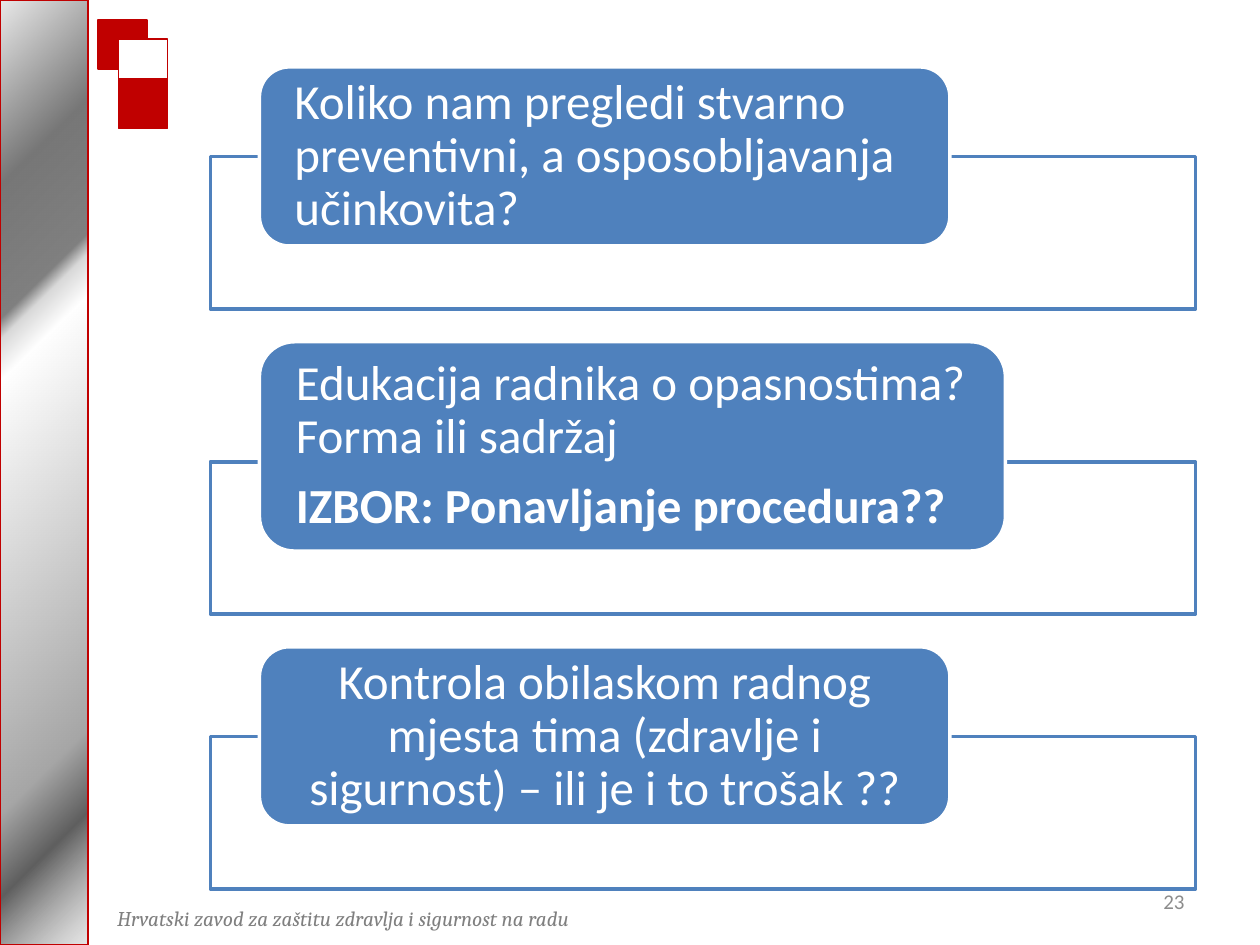
from lxml import etree
from pptx import Presentation
from pptx.dml.color import RGBColor
from pptx.enum import shapes, text
from pptx.oxml import parse_xml
from pptx.oxml.ns import nsdecls, qn
from pptx.util import Cm, Pt

RED, BLUE, WHITE = "C00000", "4F81BD", "FFFFFF"
RECT = shapes.MSO_SHAPE.RECTANGLE
ROUNDED = shapes.MSO_SHAPE.ROUNDED_RECTANGLE
LEFT, CENTER, RIGHT = text.PP_ALIGN.LEFT, text.PP_ALIGN.CENTER, text.PP_ALIGN.RIGHT

# Position (percent), colour, opacity (percent)
METAL_STOPS = [
    (0, "CBCBCB", 46), (13, "5F5F5F", 100), (21, "A6A6A6", 100), (63, "FFFFFF", 100),
    (67, "D9D9D9", 100), (69, "808080", 100), (82, "777777", 100), (100, "EAEAEA", 100),
]

# Paragraphs as (wording, bold), alignment, label width and height in cm
QUESTIONS = [
    ([("Koliko nam pregledi stvarno preventivni, a osposobljavanja učinkovita?", False)],
     LEFT, 13.92, 3.61),
    ([("Edukacija radnika o opasnostima? Forma ili sadržaj", False),
      ("IZBOR: Ponavljanje procedura??", True)],
     LEFT, 15.04, 4.22),
    ([("Kontrola obilaskom radnog mjesta tima (zdravlje i sigurnost) – ili je i to trošak ??",
       False)],
     CENTER, 13.92, 3.61),
]
FIRST_LABEL_TOP = 1.35
FRAME_HEIGHT = 3.07
OVERLAP = 1.8
GAP = 0.66


def rgb(value):
    return RGBColor.from_string(value)


def add_box(slide, preset, left, top, width, height, fill, line, line_width):
    box = slide.shapes.add_shape(preset, Cm(left), Cm(top), Cm(width), Cm(height))
    box.shadow.inherit = False
    box.fill.solid()
    box.fill.fore_color.rgb = rgb(fill)
    box.line.color.rgb = rgb(line)
    box.line.width = Pt(line_width)
    return box


def set_opacity(box, percent):
    color = box.fill._xPr.find(qn("a:solidFill"))[0]
    etree.SubElement(color, qn("a:alpha")).set("val", str(percent * 1000))


def set_metal_gradient(box):
    """Radial gradient that spreads from the bottom right corner."""
    stops = "".join(
        f'<a:gs pos="{position * 1000}"><a:srgbClr val="{color}">'
        f'<a:alpha val="{opacity * 1000}"/></a:srgbClr></a:gs>'
        for position, color, opacity in METAL_STOPS
    )
    gradient = parse_xml(
        f'<a:gradFill {nsdecls("a")} rotWithShape="1"><a:gsLst>{stops}</a:gsLst>'
        '<a:path path="circle"><a:fillToRect l="100000" t="100000"/></a:path>'
        '<a:tileRect r="-100000" b="-100000"/></a:gradFill>'
    )
    properties = box.fill._xPr
    properties.replace(properties.find(qn("a:solidFill")), gradient)


def style_font(font, name, size, color):
    font.name = name
    font.size = Pt(size)
    font.color.rgb = rgb(color)


def add_note(slide, left, top, width, height, wording, font_name, color,
             align=LEFT, anchor=text.MSO_ANCHOR.TOP, italic=False, wrap=True):
    frame = slide.shapes.add_textbox(Cm(left), Cm(top), Cm(width), Cm(height)).text_frame
    frame.word_wrap = wrap
    frame.vertical_anchor = anchor
    frame.text = wording
    paragraph = frame.paragraphs[0]
    paragraph.alignment = align
    font = paragraph.runs[0].font
    style_font(font, font_name, 12, color)
    font.italic = italic


def write_question(label, paragraphs, align):
    frame = label.text_frame
    frame.word_wrap = True
    frame.vertical_anchor = text.MSO_ANCHOR.MIDDLE
    frame.margin_left = frame.margin_right = Cm(0.53)
    frame.margin_top = frame.margin_bottom = 0
    frame.text = "\n".join(wording for wording, _ in paragraphs)
    for paragraph, (_, bold) in zip(frame.paragraphs, paragraphs):
        paragraph.alignment = align
        paragraph.line_spacing = 0.9
        paragraph.space_after = Pt(9.8)
        font = paragraph.runs[0].font
        style_font(font, "Calibri", 28, WHITE)
        font.bold = bold


def add_questions(slide):
    """Stack the labels, each overlapping the top of its own frame."""
    label_top = FIRST_LABEL_TOP
    for paragraphs, align, width, height in QUESTIONS:
        frame_top = label_top + height - OVERLAP
        frame = add_box(slide, RECT, 4.24, frame_top, 19.86, FRAME_HEIGHT, WHITE, BLUE, 2)
        set_opacity(frame, 90)
        label = add_box(slide, ROUNDED, 5.23, label_top, width, height, BLUE, WHITE, 2)
        write_question(label, paragraphs, align)
        label_top = frame_top + FRAME_HEIGHT + GAP


def add_decoration(slide):
    band = add_box(slide, RECT, 0, 0, 1.78, 19.05, WHITE, RED, 1)
    set_metal_gradient(band)
    for left, top, fill in [(1.98, 0.41, RED), (2.39, 0.79, WHITE), (2.39, 1.6, RED)]:
        add_box(slide, RECT, left, top, 0.99, 0.99, fill, RED, 1)


def main():
    presentation = Presentation()
    presentation.slide_width, presentation.slide_height = Cm(25.4), Cm(19.05)
    slide = presentation.slides.add_slide(presentation.slide_layouts[6])
    add_decoration(slide)
    add_note(slide, 2.11, 18.14, 11.23, 0.76,
             "Hrvatski zavod za zaštitu zdravlja i sigurnost na radu",
             "Cambria", "808080", italic=True, wrap=False)
    add_note(slide, 18.21, 17.65, 5.92, 1.02, "23", "Calibri", "8C8C8C",
             align=RIGHT, anchor=text.MSO_ANCHOR.MIDDLE)
    add_questions(slide)
    presentation.save("out.pptx")


if __name__ == "__main__":
    main()
